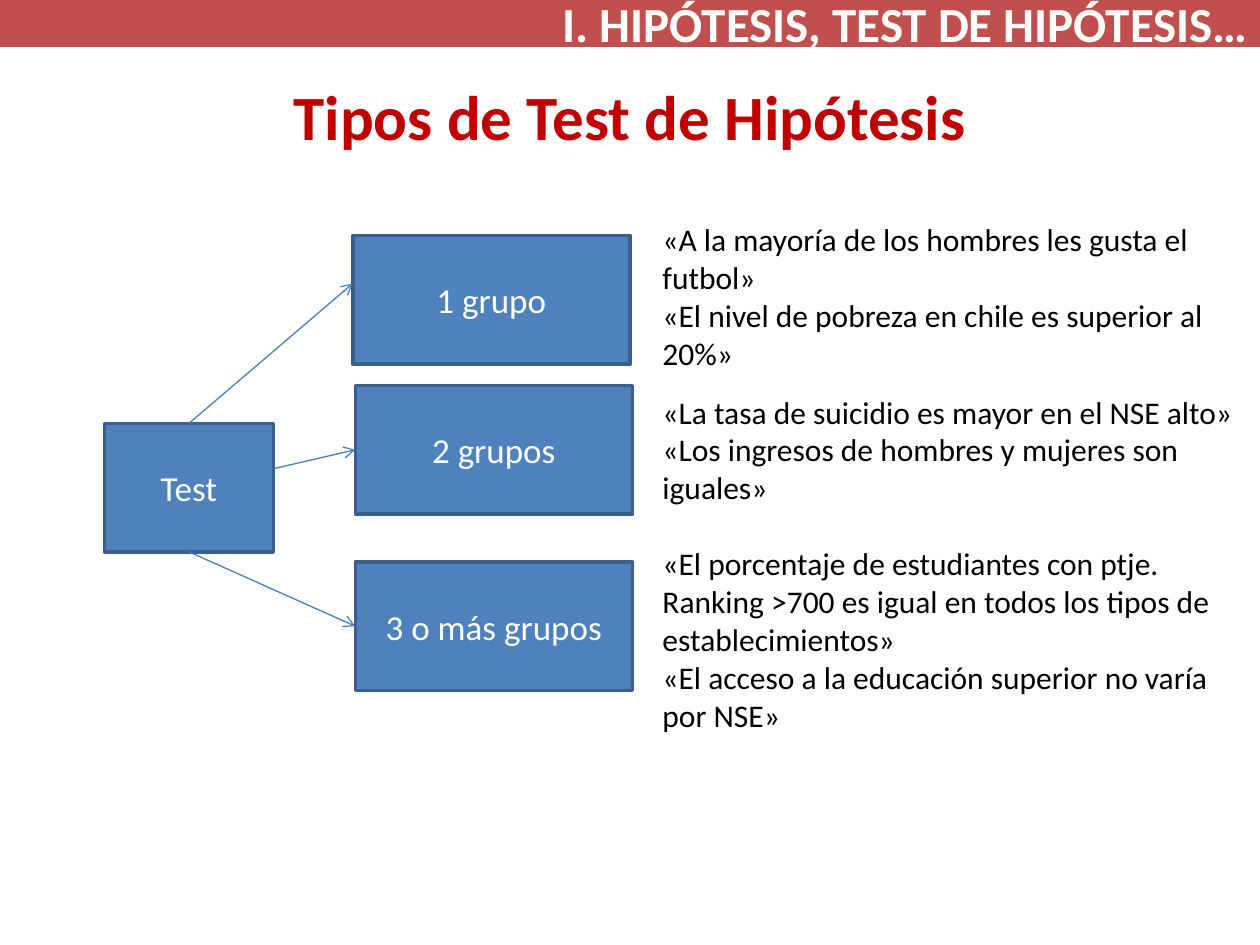
from dataclasses import dataclass

from lxml.etree import SubElement
from pptx import Presentation
from pptx.dml.color import RGBColor
from pptx.enum.shapes import MSO_CONNECTOR, MSO_SHAPE
from pptx.enum.text import MSO_ANCHOR, PP_ALIGN
from pptx.oxml.ns import qn
from pptx.util import Inches, Pt


@dataclass(frozen=True)
class Theme:
    font: str = "Calibri"
    title: str = "C00000"
    banner: str = "C0504D"
    box: str = "4F81BD"
    border: str = "3A5F8C"
    arrow: str = "4B7EBC"
    light: str = "FFFFFF"
    dark: str = "000000"
    title_size: int = 36
    banner_size: int = 28
    box_size: int = 20
    body_size: int = 18
    border_width: float = 2
    arrow_width: float = 0.75


THEME = Theme()
TOP, LEFT, BOTTOM, RIGHT = range(4)

BOX_HEIGHT = 1.02
GROUP_WIDTH = 2.2
GROUPS = [("1 grupo", 2.8, 1.87), ("2 grupos", 2.82, 3.06), ("3 o más grupos", 2.82, 4.46)]

# Each entry: space before the group of examples (points), then its examples.
EXAMPLES = [
    (0, ["«A la mayoría de los hombres les gusta el futbol»",
         "«El nivel de pobreza en chile es superior al 20%»"]),
    (12, ["«La tasa de suicidio es mayor en el NSE alto»",
          "«Los ingresos de hombres y mujeres son iguales»"]),
    (22, ["«El porcentaje de estudiantes con ptje. Ranking >700 es igual en todos "
          "los tipos de establecimientos»",
          "«El acceso a la educación superior no varía por NSE»"]),
]


def rgb(value):
    return RGBColor.from_string(value)


def write(p, text, size, color, bold=False, align=PP_ALIGN.LEFT, before=0):
    p.alignment = align
    p.space_before = Pt(before)
    r = p.add_run()
    r.text = text
    r.font.name = THEME.font
    r.font.size = Pt(size)
    r.font.bold = bold
    r.font.color.rgb = rgb(color)


def add_text_frame(slide, x, y, w, h, anchor=MSO_ANCHOR.TOP):
    tf = slide.shapes.add_textbox(Inches(x), Inches(y), Inches(w), Inches(h)).text_frame
    tf.word_wrap = True
    tf.vertical_anchor = anchor
    return tf


def add_box(slide, text, x, y, w, h, fill=THEME.box, border=THEME.border,
            size=THEME.box_size, bold=False, align=PP_ALIGN.CENTER):
    sp = slide.shapes.add_shape(MSO_SHAPE.RECTANGLE, Inches(x), Inches(y), Inches(w), Inches(h))
    sp.shadow.inherit = False
    sp.fill.solid()
    sp.fill.fore_color.rgb = rgb(fill)
    sp.line.color.rgb = rgb(border)
    sp.line.width = Pt(THEME.border_width)
    tf = sp.text_frame
    tf.word_wrap = True
    tf.vertical_anchor = MSO_ANCHOR.MIDDLE
    write(tf.paragraphs[0], text, size, THEME.light, bold, align)
    return sp


def add_arrow(slide, start, end, source=None, target=None):
    """Draw an arrow; source and target are optional (shape, side) joints."""
    line = slide.shapes.add_connector(MSO_CONNECTOR.STRAIGHT, *map(Inches, start + end))
    if source:
        line.begin_connect(*source)
    if target:
        line.end_connect(*target)
    line.line.color.rgb = rgb(THEME.arrow)
    line.line.width = Pt(THEME.arrow_width)
    SubElement(line.line._get_or_add_ln(), qn("a:tailEnd"), type="arrow")
    SubElement(line._element.spPr, qn("a:effectLst"))


def add_examples(slide):
    tf = add_text_frame(slide, 5.16, 1.7, 4.84, 5.12)
    p = tf.paragraphs[0]
    for gap, examples in EXAMPLES:
        for i, example in enumerate(examples):
            if p is None:
                p = tf.add_paragraph()
            write(p, example, THEME.body_size, THEME.dark, before=0 if i else gap)
            p = None


def main():
    prs = Presentation()
    prs.slide_width, prs.slide_height = Inches(10), Inches(7.5)
    slide = prs.slides.add_slide(prs.slide_layouts[6])

    title = add_text_frame(slide, 0.5, 0.29, 9, 1.25, MSO_ANCHOR.MIDDLE)
    write(title.paragraphs[0], "Tipos de Test de Hipótesis", THEME.title_size,
          THEME.title, bold=True, align=PP_ALIGN.CENTER)

    test = add_box(slide, "Test", 0.83, 3.36, 1.34, BOX_HEIGHT)
    one, two, three = [add_box(slide, text, x, y, GROUP_WIDTH, BOX_HEIGHT)
                       for text, x, y in GROUPS]
    add_arrow(slide, (1.5, 3.36), (2.8, 2.25), source=(test, TOP))
    add_arrow(slide, (2.17, 3.72), (2.82, 3.57), target=(two, LEFT))
    add_arrow(slide, (1.5, 4.38), (2.82, 4.97), source=(test, BOTTOM), target=(three, LEFT))

    add_examples(slide)
    add_box(slide, "I. HIPÓTESIS, TEST DE HIPÓTESIS…", 0, 0, 10, 0.36, fill=THEME.banner,
            border=THEME.banner, size=THEME.banner_size, bold=True, align=PP_ALIGN.RIGHT)

    prs.save("out.pptx")


if __name__ == "__main__":
    main()
